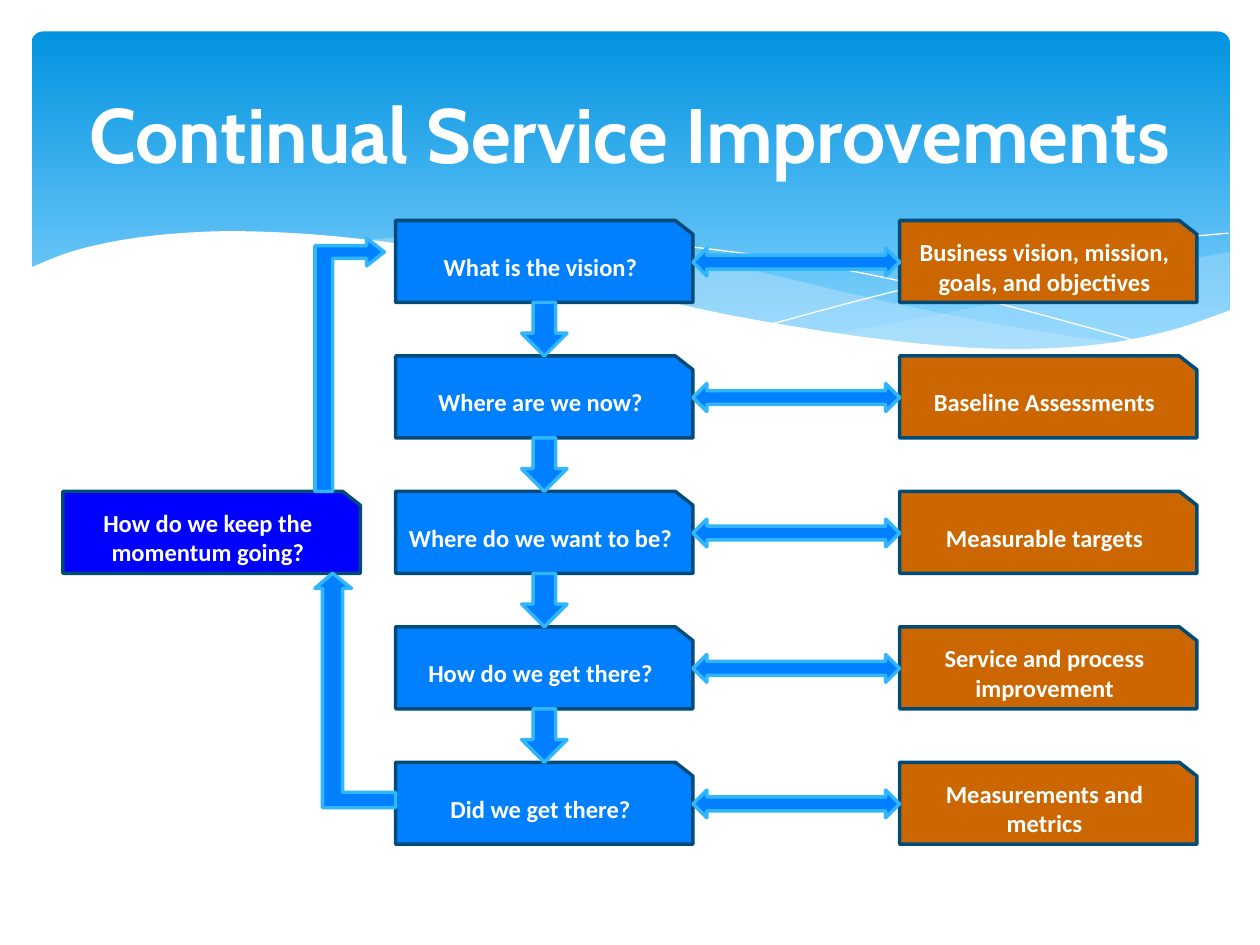
from pptx import Presentation
from pptx import util as u
from pptx.dml.color import RGBColor
from pptx.enum import shapes, text
from pptx.oxml import parse_xml
from pptx.oxml.ns import nsdecls

WHITE = RGBColor(0xFF, 0xFF, 0xFF)
SKY_TOP = RGBColor(0x02, 0x93, 0xE0)
SKY_BOTTOM = RGBColor(0x83, 0xD3, 0xFE)
MIST = RGBColor(0xC6, 0xE7, 0xFC)
BLUE = RGBColor(0x00, 0x80, 0xFF)
DEEP_BLUE = RGBColor(0x00, 0x00, 0xFF)
ORANGE = RGBColor(0xCC, 0x66, 0x00)
NAVY = RGBColor(0x00, 0x4B, 0x78)
CYAN = RGBColor(0x31, 0xB6, 0xFD)

# Grid of the flow: three columns, five rows
COLUMNS = {"loop": 0.5, "question": 3.14, "answer": 7.14}
TOP, PITCH = 1.75, 1.075
CARD_W, CARD_H = 2.36, 0.65
SNIP_W, SNIP_H = 0.14, 0.11

STEPS = [
    ("What is the vision?", "Business vision, mission, goals, and objectives"),
    ("Where are we now?", "Baseline Assessments"),
    ("Where do we want to be?", "Measurable targets"),
    ("How do we get there?", "Service and process improvement"),
    ("Did we get there?", "Measurements and metrics"),
]

# Knots of the smooth wave edges
RIGHT_CREST = [(9.76, 2), (9.06, 2.13), (8.32, 2.3), (7.53, 2.48), (6.61, 2.65)]
RIGHT_TROUGH = [(6.61, 2.65), (7.19, 2.72), (7.81, 2.77), (8.35, 2.77),
                (8.97, 2.7), (9.42, 2.59), (9.76, 2.47)]
MIDDLE_CREST = [(8.93, 2.73), (8.07, 2.6), (7.06, 2.4), (6.29, 2.22), (5.55, 2.05),
                (4.89, 1.94), (4.2, 1.87), (3.61, 1.85), (2.86, 1.91)]
MIDDLE_TROUGH = [(2.86, 1.91), (3.62, 2.03), (4.49, 2.22), (5.3, 2.4), (6.18, 2.58),
                 (6.95, 2.7), (7.61, 2.77), (8.18, 2.78), (8.93, 2.73)]
LONG_LINE = [(3.09, 1.95), (3.53, 1.89), (4.16, 1.87), (4.89, 1.9), (5.82, 2),
             (6.65, 2.13), (7.6, 2.33), (8.31, 2.51), (9.07, 2.72)]
SHORT_LINE = [(6.13, 2.57), (6.95, 2.35), (7.76, 2.16), (8.66, 1.99), (9.24, 1.9),
              (9.75, 1.85)]
WHITE_EDGE = [(9.77, 2.46), (9.3, 2.62), (8.75, 2.73), (8.09, 2.77), (7.44, 2.74),
              (6.68, 2.65), (5.79, 2.5), (5.03, 2.33), (4.18, 2.13), (3.4, 1.97),
              (2.71, 1.88), (2.11, 1.84), (1.61, 1.84), (1.06, 1.89), (0.59, 1.99),
              (0.23, 2.13)]


def smooth(knots, steps=6):
    """Points of a Catmull-Rom curve through the knots."""
    padded = [knots[0], *knots, knots[-1]]
    points = [knots[0]]
    for a, b, c, d in zip(padded, padded[1:], padded[2:], padded[3:]):
        for step in range(1, steps + 1):
            t = step / steps
            points.append(tuple(
                (2 * q + (r - p) * t + (2 * p - 5 * q + 4 * r - s) * t ** 2
                 + (3 * q - p - 3 * r + s) * t ** 3) / 2
                for p, q, r, s in zip(a, b, c, d)))
    return points


def paint(shape, fill=None, line=None, width=2):
    shape.shadow.inherit = False
    for part, color in ((shape.fill, fill), (shape.line.fill, line)):
        if color is None:
            part.background()
        else:
            part.solid()
            part.fore_color.rgb = color
    if line is not None:
        shape.line.width = u.Pt(width)
    return shape


def add_outline(slide, points, close=True, **colors):
    emu = [(u.Inches(x), u.Inches(y)) for x, y in points]
    builder = slide.shapes.build_freeform(*emu[0])
    builder.add_line_segments(emu[1:], close=close)
    return paint(builder.convert_to_shape(), **colors)


def add_mist(slide, points, percent):
    wave = add_outline(slide, points, fill=MIST)
    wave.fill._xPr.solidFill.find(".//{*}srgbClr").append(
        parse_xml(f'<a:alpha {nsdecls("a")} val="{percent * 1000}"/>'))


def add_preset(slide, kind, left, top, width, height, **colors):
    box = [u.Inches(v) for v in (left, top, width, height)]
    return paint(slide.shapes.add_shape(kind, *box), **colors)


def write(frame, words, font_name, size, **margins):
    formats = {"word_wrap": True, "auto_size": text.MSO_AUTO_SIZE.NONE,
               "vertical_anchor": text.MSO_ANCHOR.MIDDLE,
               **{f"margin_{side}": u.Inches(v) for side, v in margins.items()}}
    for name, value in formats.items():
        setattr(frame, name, value)
    paragraph = frame.paragraphs[0]
    paragraph.alignment = text.PP_ALIGN.CENTER
    run = paragraph.add_run()
    run.text = words
    for name, value in {"name": font_name, "size": u.Pt(size), "bold": True}.items():
        setattr(run.font, name, value)
    run.font.color.rgb = WHITE


def row_top(row):
    return TOP + row * PITCH


def add_card(slide, column, row, words, fill):
    left, top = COLUMNS[column], row_top(row)
    right, bottom = left + CARD_W, top + CARD_H
    card = add_outline(slide, [(left, top), (right - SNIP_W, top), (right, top + SNIP_H),
                               (right, bottom), (left, bottom)], fill=fill, line=NAVY)
    write(card.text_frame, words, "Calibri", 14,
          left=0.08, right=0.14, top=0.13, bottom=0.05)


def add_background(slide):
    sky = add_preset(slide, shapes.MSO_SHAPE.ROUNDED_RECTANGLE, 0.25, 0.25, 9.51, 2.7)
    sky.adjustments[0] = 0.034
    sky.fill.gradient()
    sky.fill.gradient_angle = 270
    for stop, color, position in zip(sky.fill.gradient_stops, (SKY_TOP, SKY_BOTTOM), (0, 0.9)):
        stop.color.rgb = color
        stop.position = position
    add_mist(slide, smooth(RIGHT_CREST) + smooth(RIGHT_TROUGH), 29)
    add_mist(slide, smooth(MIDDLE_CREST) + smooth(MIDDLE_TROUGH), 40)
    for knots in (LONG_LINE, SHORT_LINE):
        add_outline(slide, smooth(knots), close=False, line=WHITE, width=0)
    add_outline(slide, smooth(WHITE_EDGE) + [(0.23, 3.29), (9.77, 3.29)], fill=WHITE)


def add_title(slide, words):
    title = slide.shapes.title
    for name, inches in {"left": 0.5, "top": 0.37, "width": 9, "height": 1.37}.items():
        setattr(title, name, u.Inches(inches))
    write(title.text_frame, words, "Cabin", 44)
    slide.shapes._spTree.append(title._element)  # in front of the background


def add_arrows(slide):
    colors = {"fill": BLUE, "line": CYAN}
    # Down from each question to the next
    for row in range(len(STEPS) - 1):
        add_preset(slide, shapes.MSO_SHAPE.UP_ARROW, COLUMNS["question"] + CARD_W / 2 - 0.18,
                   row_top(row) + CARD_H, 0.36, PITCH - CARD_H, **colors).rotation = 180
    # Loop back: up to the first question, and from the last one
    add_outline(slide, [(2.5, 3.9), (2.5, 1.95), (2.91, 1.95), (2.91, 1.89), (3.05, 2),
                        (2.91, 2.11), (2.91, 2.05), (2.64, 2.05), (2.64, 3.9)], **colors)
    add_outline(slide, [(3.14, 6.29), (2.72, 6.29), (2.72, 4.67), (2.79, 4.67), (2.64, 4.55),
                        (2.5, 4.67), (2.56, 4.67), (2.56, 6.41), (3.14, 6.41)], **colors)
    # Between each question and its answer
    start = COLUMNS["question"] + CARD_W
    for row in range(len(STEPS)):
        add_preset(slide, shapes.MSO_SHAPE.LEFT_RIGHT_ARROW, start, row_top(row) + 0.22,
                   COLUMNS["answer"] - start, 0.22, **colors)


def main():
    deck = Presentation()
    deck.slide_width, deck.slide_height = u.Inches(10), u.Inches(7.5)
    slide = deck.slides.add_slide(deck.slide_layouts[5])
    add_background(slide)
    add_title(slide, "Continual Service Improvements")
    for row, (question, answer) in enumerate(STEPS):
        add_card(slide, "question", row, question, BLUE)
        add_card(slide, "answer", row, answer, ORANGE)
    add_card(slide, "loop", 2, "How do we keep the momentum going?", DEEP_BLUE)
    add_arrows(slide)
    deck.save("out.pptx")


if __name__ == "__main__":
    main()
